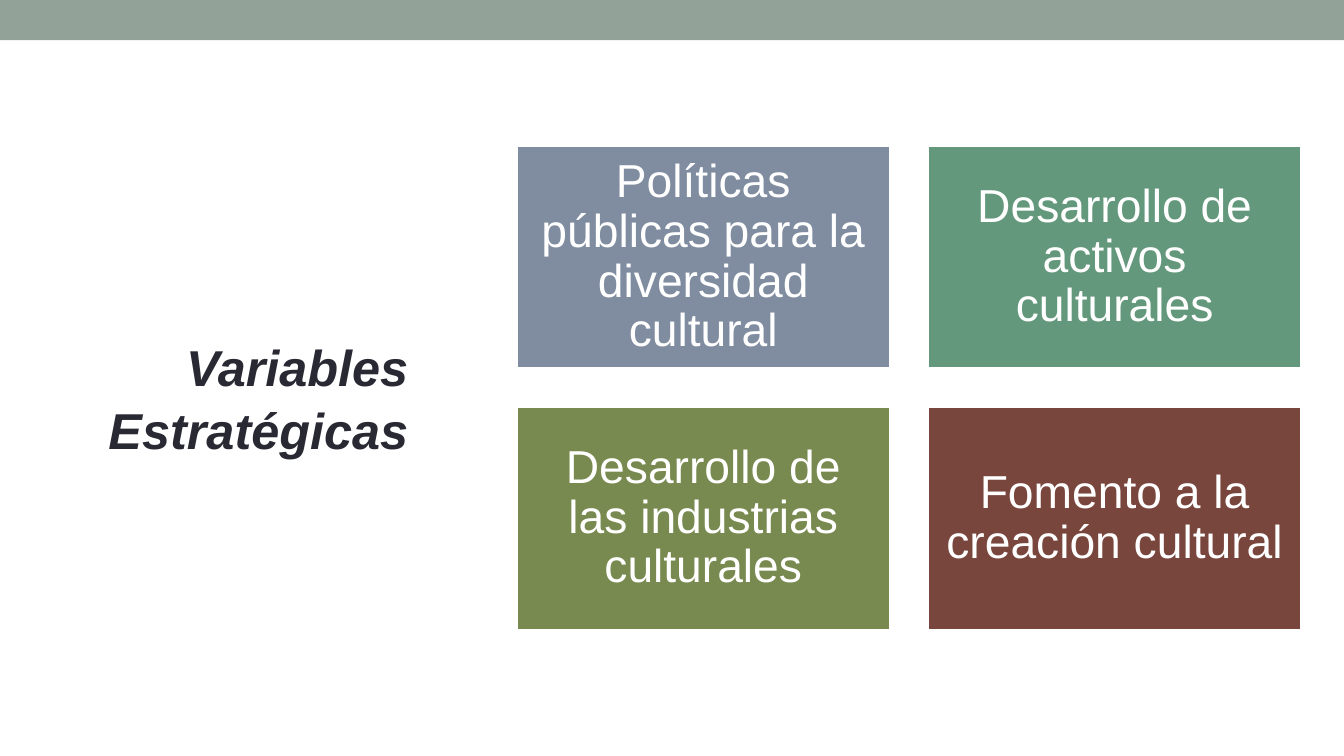
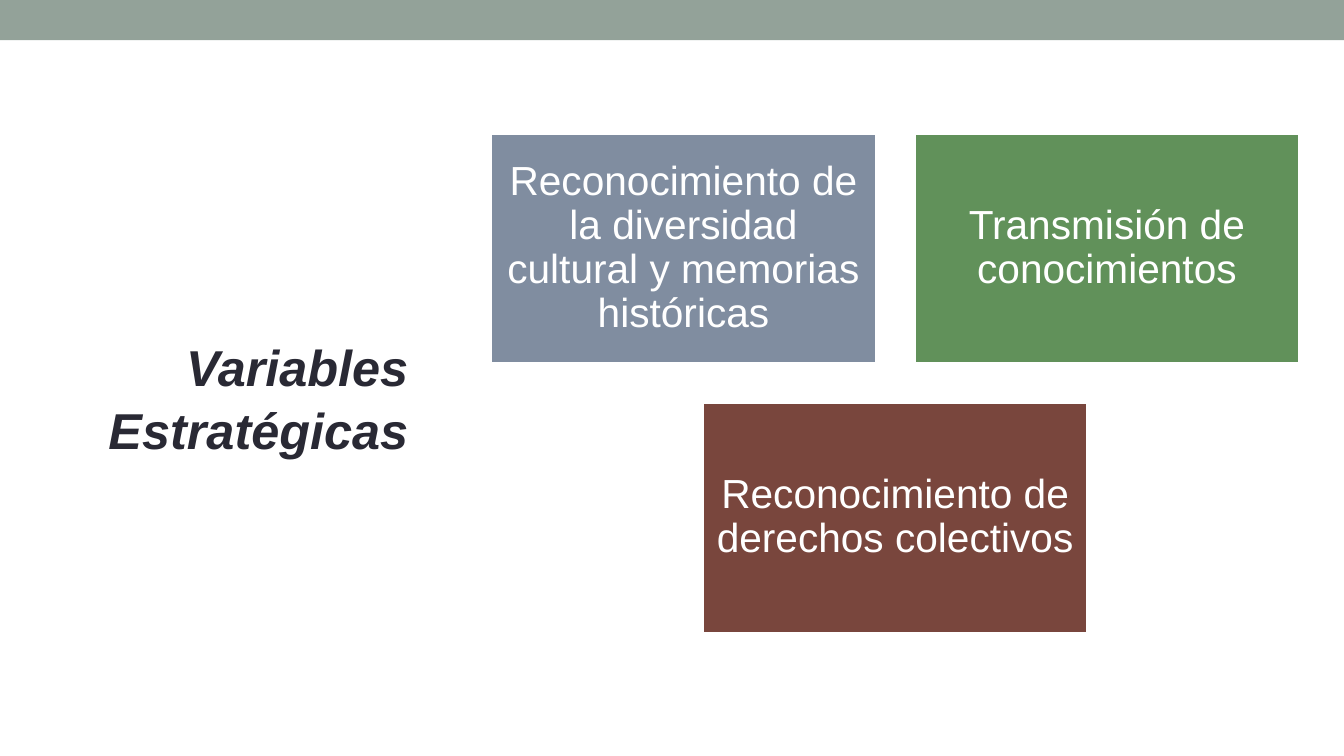
from dataclasses import dataclass

from pptx import Presentation
from pptx.dml.color import RGBColor as RGB
from pptx.enum.shapes import MSO_SHAPE as SHAPE
from pptx.enum.text import MSO_ANCHOR as ANCHOR, MSO_AUTO_SIZE as AUTO, PP_ALIGN as ALIGN
from pptx.util import Inches, Pt


@dataclass(frozen=True)
class Theme:
    font: str = "Arial"
    band: str = "93A299"
    ink: str = "292934"
    white: str = "FFFFFF"
    slate: str = "808DA0"
    teal: str = "64987C"
    olive: str = "788A50"
    green: str = "61915A"
    brown: str = "79463D"
    title_size: int = 36
    large: int = 33
    medium: int = 29


THEME = Theme()


def write(tf, text, size, color, align, anchor, spacing=1.0, inset=None, bold=False, italic=False):
    tf.word_wrap = True
    tf.auto_size = AUTO.NONE
    tf.vertical_anchor = anchor
    if inset is not None:
        tf.margin_left = tf.margin_right = Inches(inset)
        tf.margin_top = tf.margin_bottom = Inches(inset)
    p = tf.paragraphs[0]
    p.alignment = align
    p.line_spacing = spacing
    r = p.add_run()
    r.text = text
    r.font.name = THEME.font
    r.font.size = Pt(size)
    r.font.bold = bold
    r.font.italic = italic
    r.font.color.rgb = RGB.from_string(color)


class Deck:
    def __init__(self, theme):
        self.theme = theme
        self.prs = Presentation()
        self.prs.slide_width = Inches(13.33)
        self.prs.slide_height = Inches(7.5)
        self.slide = None

    def add_slide(self, title):
        self.slide = self.prs.slides.add_slide(self.prs.slide_layouts[5])
        self.rect(0, 0, 13.33, 0.4, self.theme.band)
        self.title(title)

    def rect(self, left, top, width, height, fill, line=None):
        sp = self.slide.shapes.add_shape(
            SHAPE.RECTANGLE, Inches(left), Inches(top), Inches(width), Inches(height))
        sp.shadow.inherit = False
        sp.fill.solid()
        sp.fill.fore_color.rgb = RGB.from_string(fill)
        if line:
            sp.line.color.rgb = RGB.from_string(line)
            sp.line.width = Pt(2.08)
        else:
            sp.line.fill.background()
        return sp

    def title(self, text):
        sp = self.slide.shapes.title
        sp.left, sp.top = Inches(0.85), Inches(3.28)
        sp.width, sp.height = Inches(3.3), Inches(1.31)
        write(sp.text_frame, text, self.theme.title_size, self.theme.ink,
              ALIGN.RIGHT, ANCHOR.MIDDLE, spacing=1.04, bold=True, italic=True)

    def card_grid(self, cards, left, top, width, height, gap, size, inset, columns=2):
        full_width = columns * width + (columns - 1) * gap
        for start in range(0, len(cards), columns):
            row = cards[start:start + columns]
            row_width = len(row) * width + (len(row) - 1) * gap
            x = left + (full_width - row_width) / 2
            y = top + start // columns * (height + gap)
            for i, (text, fill) in enumerate(row):
                sp = self.rect(x + i * (width + gap), y, width, height, fill, self.theme.white)
                write(sp.text_frame, text, size, self.theme.white,
                      ALIGN.CENTER, ANCHOR.MIDDLE, spacing=0.9, inset=inset)


def main():
    t = THEME
    deck = Deck(t)
    title = "Variables Estratégicas"

    deck.add_slide(title)
    deck.card_grid([
        ("Políticas públicas para la diversidad cultural", t.slate),
        ("Desarrollo de activos culturales", t.teal),
        ("Desarrollo de las industrias culturales", t.olive),
        ("Fomento a la creación cultural", t.brown),
    ], left=5.12, top=1.44, width=3.71, height=2.22, gap=0.37, size=t.large, inset=0.14)

    deck.add_slide(title)
    deck.card_grid([
        ("Reconocimiento de la diversidad cultural y memorias históricas", t.slate),
        ("Transmisión de conocimientos", t.green),
        ("Reconocimiento de derechos colectivos", t.brown),
    ], left=4.87, top=1.32, width=3.82, height=2.29, gap=0.38, size=t.medium, inset=0.12)

    deck.prs.save("out.pptx")


if __name__ == "__main__":
    main()
